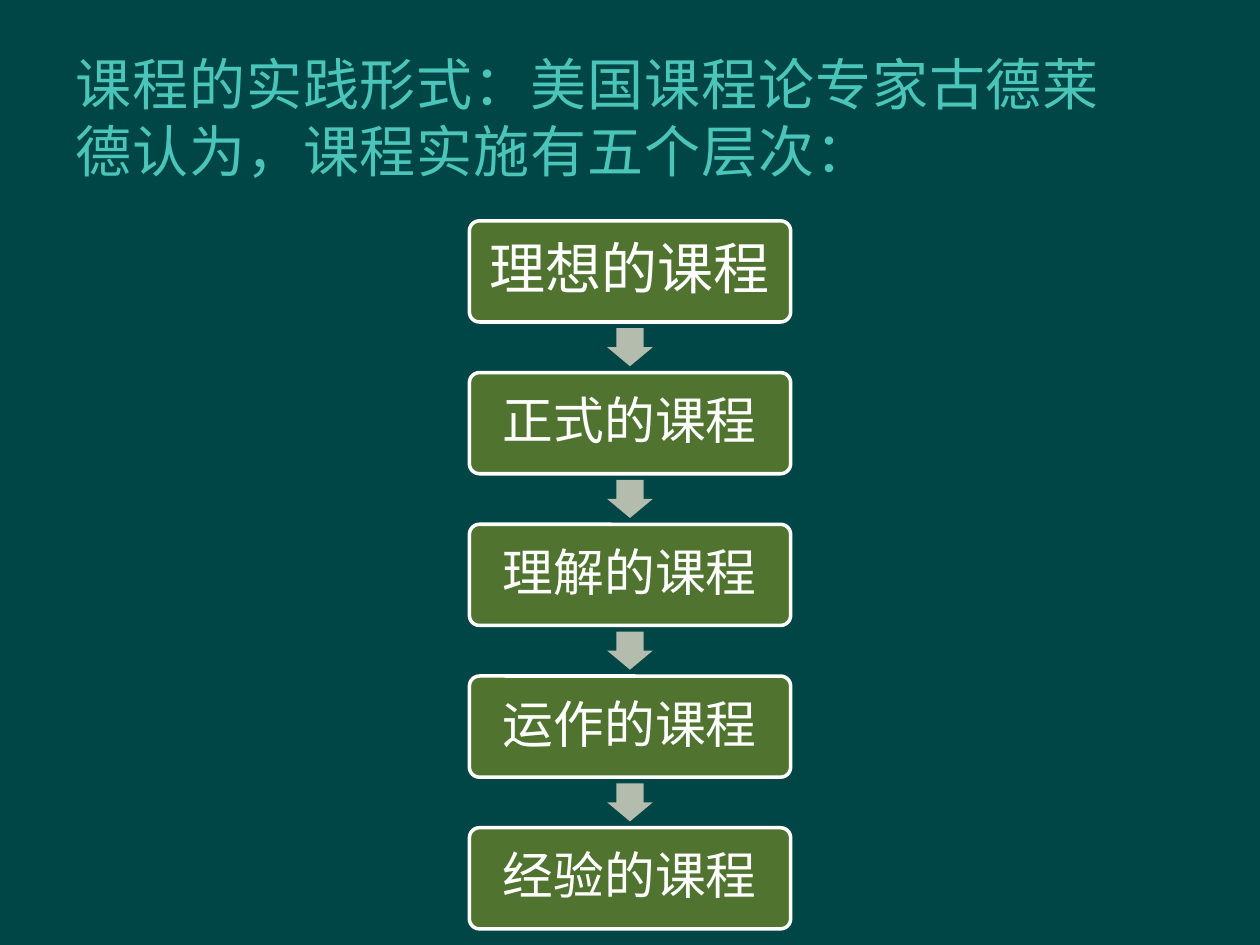
from dataclasses import dataclass

from pptx import Presentation
from pptx.dml.color import RGBColor
from pptx.enum.shapes import MSO_SHAPE as Preset
from pptx.enum.text import MSO_ANCHOR as Anchor, PP_ALIGN as Align
from pptx.util import Pt


@dataclass(frozen=True)
class Theme:
    background: str = "004646"
    title_color: str = "4BC5B9"
    box_fill: str = "50742F"
    arrow_fill: str = "B3BCAD"
    light: str = "FFFFFF"
    title_font: str = "Lato"
    box_font: str = "Times New Roman"
    title_size: int = 32
    first_size: int = 32
    level_size: int = 29


class SlideBuilder:
    def __init__(self, slide, theme):
        self.slide = slide
        self.theme = theme
        self.paint(slide.background.fill, theme.background)

    def paint(self, fill, color):
        fill.solid()
        fill.fore_color.rgb = RGBColor.from_string(color)

    def run(self, paragraph, text, font_name, size, color):
        run = paragraph.add_run()
        run.text = text
        run.font.name = font_name
        run.font.size = Pt(size)
        run.font.color.rgb = RGBColor.from_string(color)
        return run

    def title(self, text, left, top, width, height):
        theme = self.theme
        box = self.slide.shapes.add_textbox(Pt(left), Pt(top), Pt(width), Pt(height))
        frame = box.text_frame
        frame.word_wrap = True
        frame.vertical_anchor = Anchor.MIDDLE
        run = self.run(frame.paragraphs[0], text, theme.title_font,
                       theme.title_size, theme.title_color)
        run.font._element.set("spc", "50")

    def shape(self, preset, left, top, width, height, color, adjustments):
        shape = self.slide.shapes.add_shape(
            preset, Pt(left), Pt(top), Pt(width), Pt(height))
        shape.shadow.inherit = False
        self.paint(shape.fill, color)
        shape.line.fill.background()
        for index, value in enumerate(adjustments):
            shape.adjustments[index] = value
        return shape

    def level(self, text, size, left, top, width, height):
        theme = self.theme
        shape = self.shape(Preset.ROUNDED_RECTANGLE, left, top, width, height,
                           theme.box_fill, [0.1])
        self.paint(shape.line.fill, theme.light)
        shape.line.width = Pt(2)
        frame = shape.text_frame
        frame.word_wrap = True
        frame.vertical_anchor = Anchor.MIDDLE
        frame.margin_left = frame.margin_right = Pt(9)
        frame.margin_top = frame.margin_bottom = Pt(9)
        paragraph = frame.paragraphs[0]
        paragraph.alignment = Align.CENTER
        paragraph.line_spacing = 0.9
        self.run(paragraph, text, theme.box_font, size, theme.light)

    def arrow(self, left, top, width, height):
        self.shape(Preset.DOWN_ARROW, left, top, width, height,
                   self.theme.arrow_fill, [0.6, 0.5])


LEVELS = ["理想的课程", "正式的课程", "理解的课程", "运作的课程", "经验的课程"]
SLIDE_WIDTH, SLIDE_HEIGHT = 720, 540
BOX_WIDTH, BOX_HEIGHT = 183.6, 57.8
ARROW_WIDTH, ARROW_HEIGHT = 26, 21.7
FIRST_TOP, PITCH = 126.2, 86.7


def main():
    presentation = Presentation()
    presentation.slide_width = Pt(SLIDE_WIDTH)
    presentation.slide_height = Pt(SLIDE_HEIGHT)
    theme = Theme()
    slide = presentation.slides.add_slide(presentation.slide_layouts[6])
    builder = SlideBuilder(slide, theme)
    builder.title("课程的实践形式：美国课程论专家古德莱德认为，课程实施有五个层次：",
                  36, 21.6, 612, 90)

    box_left = (SLIDE_WIDTH - BOX_WIDTH) / 2
    arrow_left = (SLIDE_WIDTH - ARROW_WIDTH) / 2
    arrow_offset = (PITCH + BOX_HEIGHT - ARROW_HEIGHT) / 2
    for index, text in enumerate(LEVELS):
        top = FIRST_TOP + index * PITCH
        size = theme.level_size if index else theme.first_size
        builder.level(text, size, box_left, top, BOX_WIDTH, BOX_HEIGHT)
        if index < len(LEVELS) - 1:
            builder.arrow(arrow_left, top + arrow_offset, ARROW_WIDTH, ARROW_HEIGHT)

    presentation.save("out.pptx")


if __name__ == "__main__":
    main()
